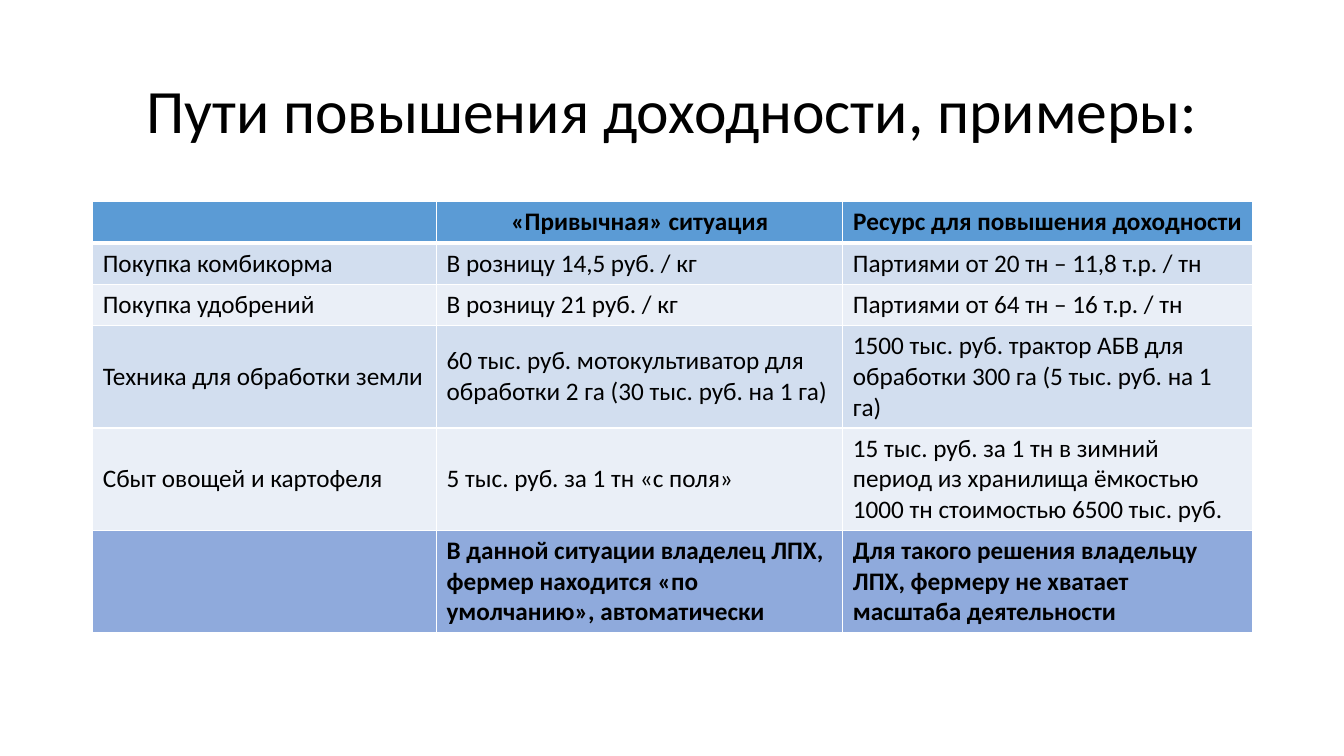
import dataclasses

import pptx
import pptx.dml.color
import pptx.enum.text
import pptx.oxml.xmlchemy
import pptx.util
from lxml import etree
from pptx.util import Inches

ALIGN = pptx.enum.text.PP_ALIGN
ANCHOR = pptx.enum.text.MSO_ANCHOR
DRAWING_NS = "http://schemas.openxmlformats.org/drawingml/2006/main"


@dataclasses.dataclass(frozen=True)
class Theme:
    font: str = "Calibri"
    title_size: int = 44
    table_size: int = 18
    text: str = "000000"
    border: str = "FFFFFF"
    header: str = "5B9BD5"
    bands: tuple = ("D2DEEF", "EAEFF7")
    summary: str = "8FAADC"


THEME = Theme()
TITLE = "Пути повышения доходности, примеры:"
COLUMN_WIDTHS = (3.41, 4.03, 4.06)
ROW_HEIGHTS = (0.41, 0.41, 0.41, 1, 1, 1)
ROWS = (
    ("", "«Привычная» ситуация", "Ресурс для повышения доходности"),
    ("Покупка комбикорма", "В розницу 14,5 руб. / кг",
     "Партиями от 20 тн – 11,8 т.р. / тн"),
    ("Покупка удобрений", "В розницу 21 руб. / кг",
     "Партиями от 64 тн – 16 т.р. / тн"),
    ("Техника для обработки земли",
     "60 тыс. руб. мотокультиватор для обработки 2 га (30 тыс. руб. на 1 га)",
     "1500 тыс. руб. трактор АБВ для обработки 300 га (5 тыс. руб. на 1 га)"),
    ("Сбыт овощей и картофеля", "5 тыс. руб. за 1 тн «с поля»",
     "15 тыс. руб. за 1 тн в зимний период из хранилища ёмкостью 1000 тн "
     "стоимостью 6500 тыс. руб."),
    ("", "В данной ситуации владелец ЛПХ, фермер находится «по умолчанию», автоматически",
     "Для такого решения владельцу ЛПХ, фермеру не хватает масштаба деятельности"),
)


def rgb(color):
    return pptx.dml.color.RGBColor.from_string(color)


def write(frame, text, size, align, bold=False):
    paragraph = frame.paragraphs[0]
    paragraph.alignment = align
    paragraph.font.size = pptx.util.Pt(size)
    if text:
        run = paragraph.add_run()
        run.text = text
        run.font.name = THEME.font
        run.font.size = pptx.util.Pt(size)
        run.font.bold = bold
        run.font.color.rgb = rgb(THEME.text)
    return paragraph


def set_borders(cell, top, bottom):
    """Borders precede the fill in the cell properties."""
    properties = cell._tc.get_or_add_tcPr()
    for index, (side, width) in enumerate(
            (("lnL", 1), ("lnR", 1), ("lnT", top), ("lnB", bottom))):
        line = etree.Element(f"{{{DRAWING_NS}}}{side}", w=str(pptx.util.Pt(width)))
        fill = etree.SubElement(line, f"{{{DRAWING_NS}}}solidFill")
        etree.SubElement(fill, f"{{{DRAWING_NS}}}srgbClr", val=THEME.border)
        properties.insert(index, line)


def add_title(slide):
    title = slide.shapes.title
    title.left, title.top = Inches(0.92), Inches(0.4)
    title.width, title.height = Inches(11.5), Inches(1.45)
    title.text_frame.vertical_anchor = ANCHOR.MIDDLE
    write(title.text_frame, TITLE, THEME.title_size, ALIGN.CENTER).line_spacing = 0.9


def add_comparison(slide):
    table = slide.shapes.add_table(
        len(ROWS), len(COLUMN_WIDTHS), Inches(0.92), Inches(2),
        Inches(sum(COLUMN_WIDTHS)), Inches(sum(ROW_HEIGHTS))).table
    for column, width in zip(table.columns, COLUMN_WIDTHS):
        column.width = Inches(width)

    # Header and summary rows frame the banded examples
    last = len(ROWS) - 1
    for index, (texts, height) in enumerate(zip(ROWS, ROW_HEIGHTS)):
        table.rows[index].height = Inches(height)
        is_header = index == 0
        color = {0: THEME.header, last: THEME.summary}.get(
            index, THEME.bands[(index - 1) % 2])
        for cell, text in zip(table.rows[index].cells, texts):
            cell.fill.solid()
            cell.fill.fore_color.rgb = rgb(color)
            cell.vertical_anchor = ANCHOR.TOP if is_header else ANCHOR.MIDDLE
            set_borders(cell, 3 if index == 1 else 1, 3 if is_header else 1)
            write(cell.text_frame, text, THEME.table_size,
                  ALIGN.CENTER if is_header else ALIGN.LEFT, index in (0, last))


def main():
    presentation = pptx.Presentation()
    presentation.slide_width = Inches(13.33)
    presentation.slide_height = Inches(7.5)
    slide = presentation.slides.add_slide(presentation.slide_layouts[5])
    add_title(slide)
    add_comparison(slide)
    presentation.save("out.pptx")


if __name__ == "__main__":
    main()
